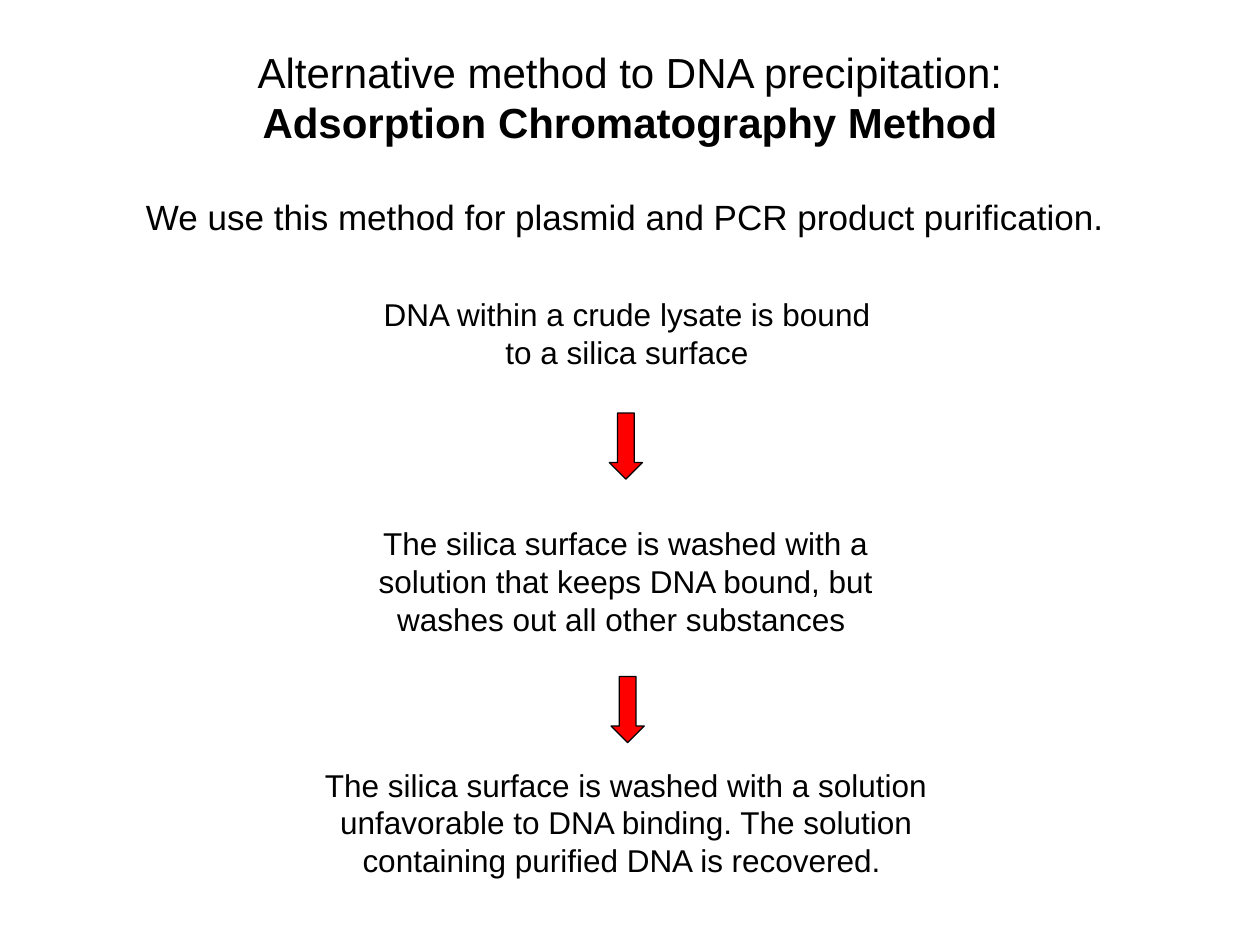
import pptx
import pptx.util
import pptx.dml.color
import pptx.enum.shapes
import pptx.enum.text

Pt = pptx.util.Pt
ALIGN = pptx.enum.text.PP_ALIGN
ANCHOR = pptx.enum.text.MSO_ANCHOR
SHAPE = pptx.enum.shapes.MSO_SHAPE


def color(code):
    return pptx.dml.color.RGBColor.from_string(code)


def style(para, size, bold=False):
    para.alignment = ALIGN.CENTER
    for run in para.runs:
        run.font.name = "Arial"
        run.font.size = Pt(size)
        run.font.bold = bold
        run.font.color.rgb = color("000000")


deck = pptx.Presentation()
deck.slide_width, deck.slide_height = Pt(720), Pt(540)
slide = deck.slides.add_slide(deck.slide_layouts[5])

# Title with the line on its use
title = slide.shapes.title
title.left, title.top, title.width, title.height = Pt(21), Pt(23), Pt(678), Pt(119)
frame = title.text_frame
frame.word_wrap = True
frame.auto_size = pptx.enum.text.MSO_AUTO_SIZE.NONE
frame.vertical_anchor = ANCHOR.TOP
frame.text = (
    "Alternative method to DNA precipitation:\n"
    "Adsorption Chromatography Method\n"
    "We use this method for plasmid and PCR product purification. "
)
head, name, usage = frame.paragraphs
style(head, 24)
style(name, 24, bold=True)
style(usage, 20)
usage.space_before = Pt(27.5)

# Steps of the method: left, top, width, height, text
steps = [
    (211, 165, 294.5, 50.5,
     "DNA within a crude lysate is bound to a silica surface"),
    (186.5, 296, 342, 72,
     "The silica surface is washed with a solution that keeps DNA bound, "
     "but washes out all other substances "),
    (146, 434, 423.5, 72,
     "The silica surface is washed with a solution unfavorable to DNA binding. "
     "The solution containing purified DNA is recovered. "),
]
for left, top, width, height, text in steps:
    box = slide.shapes.add_textbox(Pt(left), Pt(top), Pt(width), Pt(height))
    box.text_frame.word_wrap = True
    box.text_frame.text = text
    style(box.text_frame.paragraphs[0], 18)

# Arrows between the steps
for left, top in [(348.2, 236), (349.2, 386.6)]:
    arrow = slide.shapes.add_shape(
        SHAPE.DOWN_ARROW, Pt(left), Pt(top), Pt(19), Pt(37.8))
    arrow.shadow.inherit = False
    arrow.fill.solid()
    arrow.fill.fore_color.rgb = color("FF0000")
    arrow.line.color.rgb = color("000000")
    arrow.line.width = Pt(0.75)

deck.save("out.pptx")
